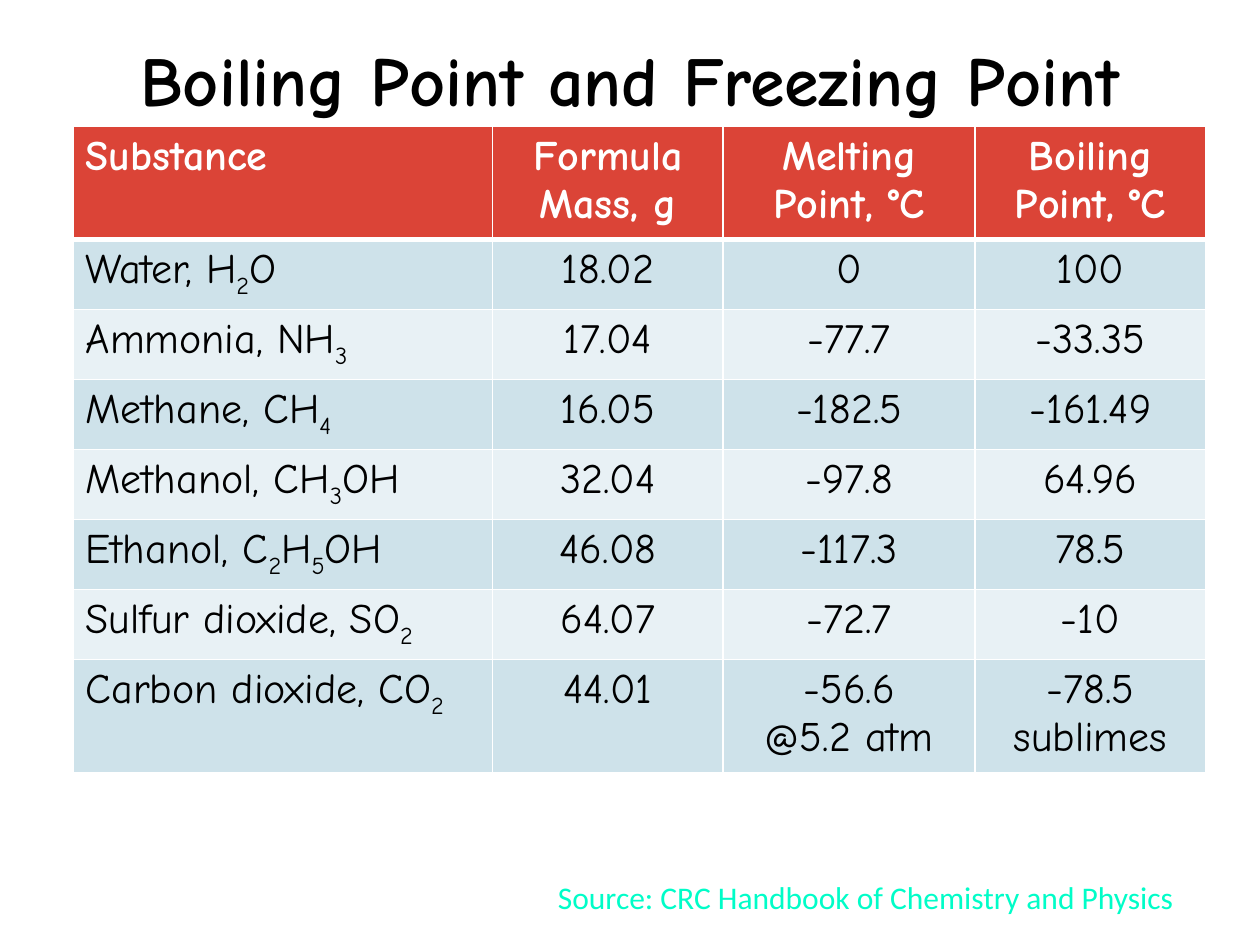
from itertools import groupby

from lxml import etree
from pptx import Presentation
from pptx.dml.color import RGBColor
from pptx.enum.text import MSO_ANCHOR, PP_ALIGN
from pptx.oxml.ns import qn
from pptx.util import Inches, Pt

LEFT, CENTER = PP_ALIGN.LEFT, PP_ALIGN.CENTER
TOP, MIDDLE = MSO_ANCHOR.TOP, MSO_ANCHOR.MIDDLE

HEADER = ["Substance", "Formula Mass, g", "Melting Point, °C", "Boiling Point, °C"]
SUBSTANCES = [
    ["Water, H2O", "18.02", "0", "100"],
    ["Ammonia, NH3", "17.04", "-77.7", "-33.35"],
    ["Methane, CH4", "16.05", "-182.5", "-161.49"],
    ["Methanol, CH3OH", "32.04", "-97.8", "64.96"],
    ["Ethanol, C2H5OH", "46.08", "-117.3", "78.5"],
    ["Sulfur dioxide, SO2", "64.07", "-72.7", "-10"],
    ["Carbon dioxide, CO2", "44.01", "-56.6\n@5.2 atm", "-78.5\nsublimes"],
]
COLUMN_WIDTHS = [3.33, 1.83, 2, 1.83]
ROW_HEIGHTS = [0.85] + [0.53] * 6 + [0.85]


def color(hex_text):
    return RGBColor.from_string(hex_text)


class Deck:
    heading_font = "Comic Neue"
    source_font = "Calibri"
    black, white, accent = "000000", "FFFFFF", "00FDC8"
    header_fill = "DB4437"
    band_fills = ["CEE2EA", "E8F1F5"]

    def __init__(self, width, height):
        self.presentation = Presentation()
        self.presentation.slide_width = Inches(width)
        self.presentation.slide_height = Inches(height)
        blank = self.presentation.slide_layouts[6]
        self.page = self.presentation.slides.add_slide(blank)

    def format_text(self, frame, font, size, hex_text, bold=False, align=LEFT):
        for para in frame.paragraphs:
            para.alignment = align
            for span in para.runs:
                span.font.name = font
                span.font.size = Pt(size)
                span.font.bold = bold
                span.font.color.rgb = color(hex_text)

    def text(self, text, left, top, width, height, anchor=TOP, **style):
        box = self.page.shapes.add_textbox(
            Inches(left), Inches(top), Inches(width), Inches(height))
        frame = box.text_frame
        frame.word_wrap = True
        frame.vertical_anchor = anchor
        frame.text = text
        self.format_text(frame, **style)

    def formula(self, para, text):
        """Write a substance name with its digits as subscripts."""
        for is_digit, letters in groupby(text, str.isdigit):
            span = para.add_run()
            span.text = "".join(letters)
            if is_digit:
                span.font._element.set("baseline", "-25000")

    def borders(self, cell, **widths):
        properties = cell._tc.get_or_add_tcPr()
        for side in "LRTB":
            line = etree.SubElement(properties, qn(f"a:ln{side}"),
                                    w=str(Pt(widths.get(side, 1))))
            fill = etree.SubElement(line, qn("a:solidFill"))
            etree.SubElement(fill, qn("a:srgbClr"), val=self.white)

    def table(self, rows, left, top, widths, heights):
        frame = self.page.shapes.add_table(
            len(rows), len(widths), Inches(left), Inches(top),
            Inches(sum(widths)), Inches(sum(heights)))
        table = frame.table
        for column, width in zip(table.columns, widths):
            column.width = Inches(width)
        for r, (values, height) in enumerate(zip(rows, heights)):
            table.rows[r].height = Inches(height)
            is_header = r == 0
            fill = self.header_fill if is_header else self.band_fills[(r - 1) % 2]
            for c, value in enumerate(values):
                cell = table.cell(r, c)
                if c == 0:
                    self.formula(cell.text_frame.paragraphs[0], value)
                else:
                    cell.text_frame.text = value
                self.format_text(
                    cell.text_frame, self.heading_font, 24,
                    self.white if is_header else self.black,
                    bold=is_header, align=CENTER if c else LEFT)
                self.borders(cell, B=3 if is_header else 1, T=3 if r == 1 else 1)
                cell.fill.solid()
                cell.fill.fore_color.rgb = color(fill)


def main():
    deck = Deck(10, 7.5)
    deck.text("Boiling Point and Freezing Point", 0.5, 0, 9, 1.25, anchor=MIDDLE,
              font=deck.heading_font, size=40, hex_text=deck.black,
              bold=True, align=CENTER)
    deck.table([HEADER] + SUBSTANCES, 0.58, 1, COLUMN_WIDTHS, ROW_HEIGHTS)
    deck.text("Source: CRC Handbook of Chemistry and Physics", 4.33, 6.92, 5.17, 0.4,
              font=deck.source_font, size=18, hex_text=deck.accent)
    deck.presentation.save("out.pptx")


if __name__ == "__main__":
    main()
